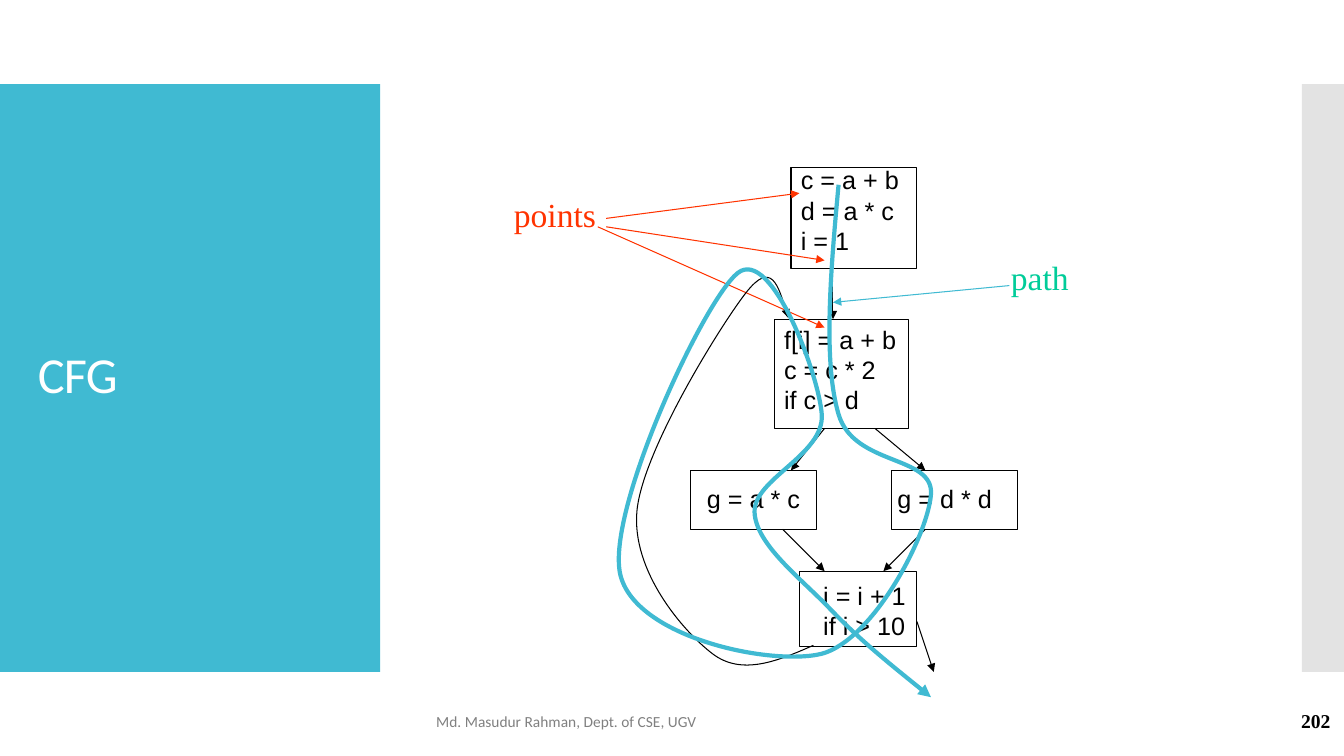
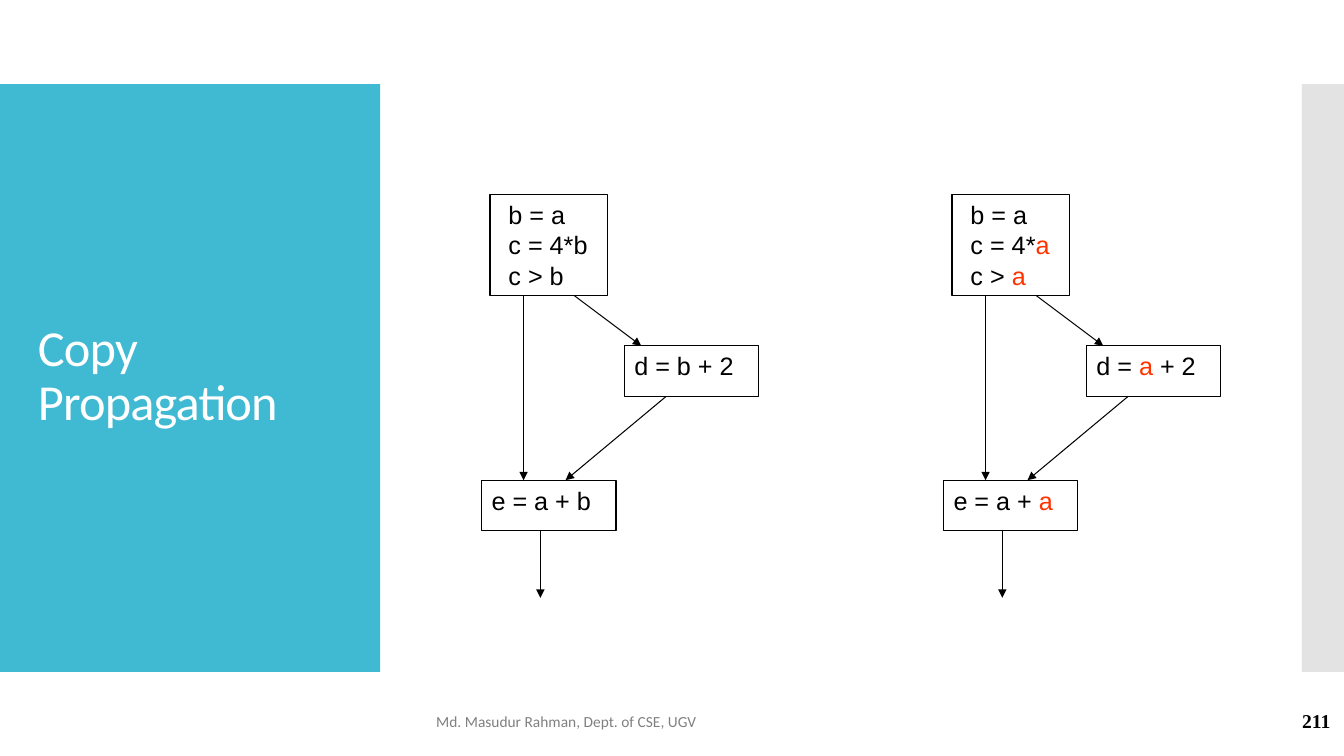
from lxml.etree import SubElement
from pptx import Presentation
from pptx.dml.color import RGBColor
from pptx.enum.shapes import MSO_CONNECTOR as CONNECTOR, MSO_SHAPE as SHAPE
from pptx.enum.text import MSO_ANCHOR as ANCHOR, PP_ALIGN as ALIGN
from pptx.oxml.ns import qn
from pptx.util import Pt

TEAL = RGBColor(0x40, 0xBA, 0xD2)
PALE_GREY = RGBColor(0xE3, 0xE3, 0xE3)
GREY = RGBColor(0x80, 0x80, 0x80)
BLACK = RGBColor(0, 0, 0)
WHITE = RGBColor(0xFF, 0xFF, 0xFF)
RED = RGBColor(0xFF, 0x33, 0x00)
GREEN = RGBColor(0x00, 0xCC, 0x99)
SERIF = "Times New Roman"


def write(shape, lines, name, size, color, align=ALIGN.LEFT,
          anchor=ANCHOR.MIDDLE, left=7.2, top=3.6):
    """Fill a shape with lines; every second part between bars is red."""
    frame = shape.text_frame
    frame.word_wrap = True
    frame.vertical_anchor = anchor
    frame.margin_left, frame.margin_top = Pt(left), Pt(top)
    if align == ALIGN.LEFT:
        frame.margin_right = 0
    for index, line in enumerate(lines):
        para = frame.add_paragraph() if index else frame.paragraphs[0]
        para.alignment = align
        font = para.font
        font.name, font.size, font.color.rgb = name, Pt(size), color
        for position, part in enumerate(line.split("|")):
            span = para.add_run()
            span.text = part
            if position % 2:
                span.font.color.rgb = RED
    return frame


def outline(shape, color=BLACK, width=0.75, arrow=True):
    """Give a shape or connector a plain line without shadow."""
    shape.line.color.rgb = color
    shape.line.width = Pt(width)
    properties = shape.element.spPr
    if arrow:
        SubElement(properties.find(qn("a:ln")), qn("a:tailEnd"), type="triangle")
    SubElement(properties, qn("a:effectLst"))


deck = Presentation()
deck.slide_width, deck.slide_height = Pt(960), Pt(540)

# Flow graphs: boxes (lines, left, top, width, height, left inset, top inset)
cfg_boxes = [
    (["c = a + b", "d = a * c", "i = 1"], 565, 120, 90, 72, 7.2, -2.4),
    (["f[i] = a + b", "c = c * 2", "if c > d"], 553, 228, 96, 78, 7.2, 3.6),
    (["g = a * c"], 493, 336, 90, 42, 12, 9.4),
    (["g = d * d"], 637, 336, 90, 42, 4, 9.4),
    (["i = i + 1", "if i > 10"], 571, 408, 84, 54, 17, 6.5),
]
# Arrows (from x, from y, to x, to y, colour)
cfg_arrows = [
    (595, 192, 595, 228, BLACK),
    (589, 306, 565, 336, BLACK),
    (625, 306, 661, 336, BLACK),
    (559, 378, 589, 408, BLACK),
    (661, 378, 631, 408, BLACK),
    (655, 444, 667, 480, BLACK),
    (433, 156, 571, 138, RED),
    (427, 162, 589, 234, RED),
    (433, 162, 589, 186, RED),
    (721, 204, 595, 216, TEAL),
]

# The same graph before and after propagation, side by side
copy_boxes, copy_arrows = [], []
versions = [
    (0, ["b = a", "c = 4*b", "c > b"], "d = b + 2", "e = a + b"),
    (330, ["b = a", "c = 4*|a", "c > |a"], "d = |a| + 2", "e = a + |a"),
]
for shift, first, second, third in versions:
    copy_boxes += [
        (first, 350 + shift, 139, 84, 72, 13.2, 3.6),
        ([second], 446 + shift, 247, 96, 36, 7.2, 3.6),
        ([third], 344 + shift, 343, 96, 36, 7.2, 3.6),
    ]
    copy_arrows += [
        (374 + shift, 211, 374 + shift, 343, BLACK),
        (410 + shift, 211, 458 + shift, 247, BLACK),
        (476 + shift, 283, 404 + shift, 343, BLACK),
        (386 + shift, 379, 386 + shift, 427, BLACK),
    ]

# Curves (colour, width, start point, then three points for each bend)
loop_back = (BLACK, 0.75, [
    (581, 461),
    (556, 472), (530, 483), (509, 467),
    (488, 451), (451, 408), (455, 365),
    (459, 322), (515, 232), (533, 209),
    (551, 186), (557, 207), (563, 227),
])
execution = (TEAL, 3, [
    (599, 132),
    (593, 196), (588, 259), (599, 296),
    (610, 333), (667, 325), (665, 353),
    (663, 382), (624, 457), (587, 467),
    (550, 476), (453, 455), (443, 410),
    (433, 364), (503, 214), (527, 195),
    (551, 176), (585, 268), (587, 296),
    (589, 325), (538, 342), (539, 366),
    (540, 389), (572, 413), (593, 435),
    (614, 457), (639, 477), (665, 498),
])
cfg_labels = [("points", 360, 135, 80, RED), ("path", 715, 180, 60, GREEN)]

slides = [
    ("CFG", "202", cfg_boxes, cfg_arrows, [loop_back, execution], cfg_labels),
    ("Copy Propagation", "211", copy_boxes, copy_arrows, [], []),
]

for title, number, boxes, arrows, curves, labels in slides:
    page = deck.slides.add_slide(deck.slide_layouts[6])
    shapes = page.shapes

    # Side bands
    for left, width, color in [(0, 271.5, TEAL), (930, 30, PALE_GREY)]:
        band = shapes.add_shape(SHAPE.RECTANGLE, Pt(left), Pt(60), Pt(width), Pt(420))
        band.fill.solid()
        band.fill.fore_color.rgb = color
        band.line.fill.background()
        band.shadow.inherit = False

    # Title, footer and page number
    heading = shapes.add_textbox(Pt(20), Pt(88.5), Pt(232), Pt(362))
    para = write(heading, [title], "Calibri", 36, WHITE).paragraphs[0]
    para.line_spacing = 0.9
    for default in heading.element.iter(qn("a:defRPr")):
        default.set("spc", "-60")
    footer = shapes.add_textbox(Pt(304.5), Pt(500.5), Pt(465), Pt(29))
    write(footer, ["Md. Masudur Rahman, Dept. of CSE, UGV"], "Calibri", 11, GREY)
    counter = shapes.add_textbox(Pt(837.5), Pt(500.5), Pt(120), Pt(29))
    frame = write(counter, [number], SERIF, 14, BLACK, ALIGN.RIGHT)
    frame.paragraphs[0].font.bold = True

    # Code boxes
    for lines, left, top, width, height, inset, drop in boxes:
        box = shapes.add_shape(SHAPE.RECTANGLE, Pt(left), Pt(top), Pt(width), Pt(height))
        box.fill.background()
        outline(box, arrow=False)
        write(box, lines, "Arial", 18, BLACK, anchor=ANCHOR.TOP, left=inset, top=drop)

    # Arrows
    for x1, y1, x2, y2, color in arrows:
        arrow = shapes.add_connector(CONNECTOR.STRAIGHT, Pt(x1), Pt(y1), Pt(x2), Pt(y2))
        outline(arrow, color)

    # Curves: each run of three points becomes one cubic bend
    for color, width, points in curves:
        builder = shapes.build_freeform(*points[0], scale=Pt(1))
        builder.add_line_segments(points[1:], close=False)
        curve = builder.convert_to_shape()
        curve.fill.background()
        outline(curve, color, width)
        segments = list(curve.element.iter(qn("a:lnTo")))
        for start in range(0, len(segments), 3):
            bend = SubElement(segments[start].getparent(), qn("a:cubicBezTo"))
            for segment in segments[start:start + 3]:
                bend.append(segment[0])
                segment.getparent().remove(segment)

    # Labels
    for text, left, top, width, color in labels:
        label = shapes.add_textbox(Pt(left), Pt(top), Pt(width), Pt(36))
        write(label, [text], SERIF, 24, color, anchor=ANCHOR.TOP)

deck.save("out.pptx")
